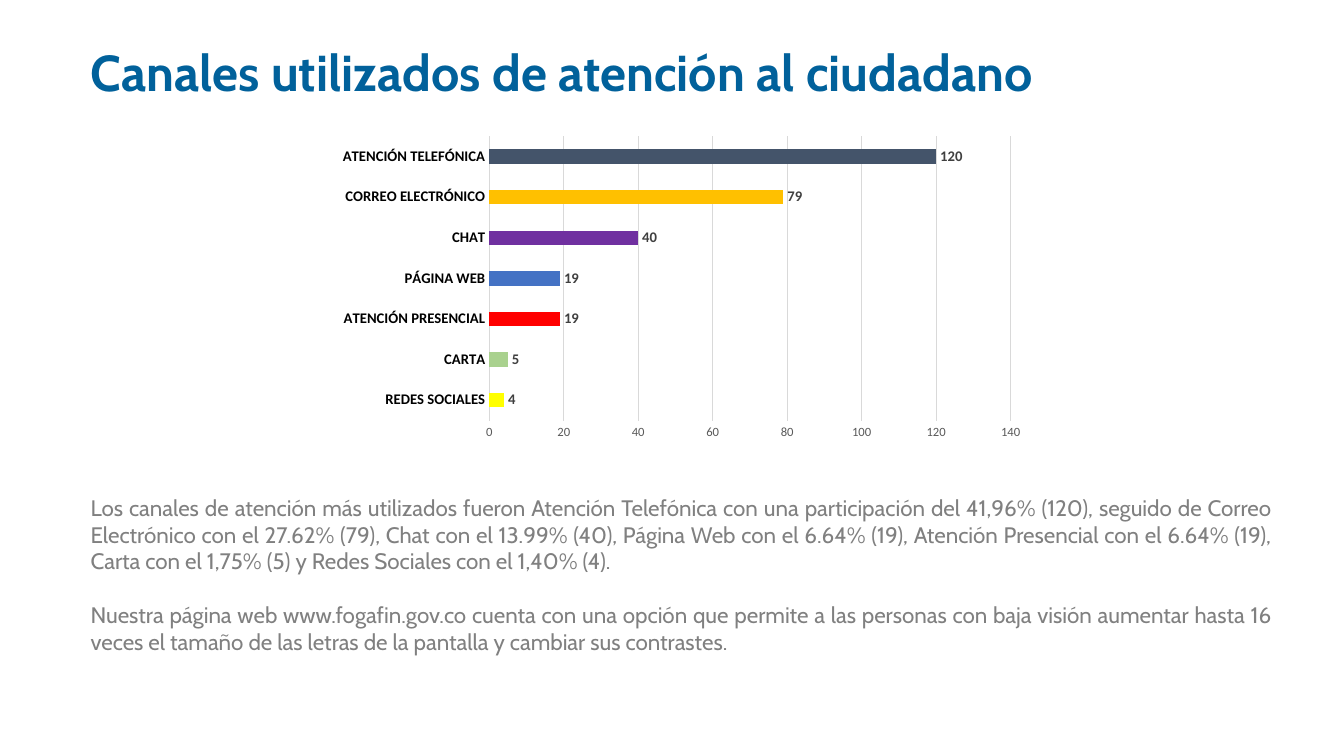
"""Builds the slide on the channels used for citizen service."""
from dataclasses import dataclass

from pptx import Presentation
from pptx.chart.data import CategoryChartData
from pptx.dml.color import RGBColor
from pptx.enum.chart import XL_CHART_TYPE, XL_LABEL_POSITION, XL_TICK_MARK
from pptx.enum.text import MSO_ANCHOR, PP_ALIGN
from pptx.util import Inches, Pt


@dataclass(frozen=True)
class Theme:
    heading_font: str = "Cabin"
    chart_font: str = "Calibri"
    heading: str = "01619B"
    body: str = "808080"
    category: str = "000000"
    value: str = "404040"
    scale: str = "595959"
    grid: str = "D9D9D9"
    bar: str = "5B9BD5"
    heading_size: float = 36
    body_size: float = 16
    label_size: float = 10.5
    scale_size: float = 9
    chart_size: float = 10


theme = Theme()


def style(font, *, face, size, color, bold=False):
    font.name, font.size, font.bold = face, Pt(size), bold
    font.color.rgb = RGBColor.from_string(color)


def write(paragraph, text, *, align=PP_ALIGN.LEFT, spacing=1.0, before=0, **look):
    paragraph.alignment = align
    paragraph.line_spacing = spacing
    paragraph.space_before = Pt(before)
    run = paragraph.add_run()
    run.text = text
    style(run.font, **look)


deck = Presentation()
deck.slide_width, deck.slide_height = Inches(13.33), Inches(7.5)
slide = deck.slides.add_slide(deck.slide_layouts[5])
margin = Inches(0.8)

heading = slide.shapes.title
heading.left, heading.top = margin, Inches(0.2)
heading.width, heading.height = Inches(10.59), Inches(1.09)
heading.text_frame.vertical_anchor = MSO_ANCHOR.MIDDLE
heading.text_frame.word_wrap = True
write(heading.text_frame.paragraphs[0], "Canales utilizados de atención al ciudadano",
      spacing=0.9, face=theme.heading_font, size=theme.heading_size,
      color=theme.heading, bold=True)

findings = [
    "Los canales de atención más utilizados fueron Atención Telefónica con una "
    "participación del 41,96% (120), seguido de Correo Electrónico con el 27.62% (79), "
    "Chat con el 13.99% (40), Página Web con el 6.64% (19), Atención Presencial con el "
    "6.64% (19), Carta con el 1,75% (5) y Redes Sociales con el 1,40% (4).",
    "Nuestra página web www.fogafin.gov.co cuenta con una opción que permite a las "
    "personas con baja visión aumentar hasta 16 veces el tamaño de las letras de la "
    "pantalla y cambiar sus contrastes.",
]
summary = slide.shapes.add_textbox(
    margin, Inches(4.85), Inches(11.92), Inches(1.72)).text_frame
summary.word_wrap = True
for index, finding in enumerate(findings):
    paragraph = summary.add_paragraph() if index else summary.paragraphs[0]
    write(paragraph, finding, align=PP_ALIGN.JUSTIFY, before=19.4 * index,
          face=theme.heading_font, size=theme.body_size, color=theme.body)

channels = [
    ("REDES SOCIALES", 4, "FFFF00"),
    ("CARTA", 5, "A9D18E"),
    ("ATENCIÓN PRESENCIAL", 19, "FF0000"),
    ("PÁGINA WEB", 19, "4472C4"),
    ("CHAT", 40, "7030A0"),
    ("CORREO ELECTRÓNICO", 79, "FFC000"),
    ("ATENCIÓN TELEFÓNICA", 120, "44546A"),
]
requests = CategoryChartData()
requests.categories = [name for name, count, color in channels]
requests.add_series("Series 1", [count for name, count, color in channels])
usage = slide.shapes.add_chart(
    XL_CHART_TYPE.BAR_CLUSTERED, Inches(3.26), Inches(1.29), Inches(7), Inches(3.13),
    requests).chart
usage.has_legend = False
usage.has_title = False
style(usage.font, face=theme.chart_font, size=theme.chart_size, color=theme.category)

channel_axis, count_axis = usage.category_axis, usage.value_axis
for axis in (channel_axis, count_axis):
    axis.major_tick_mark = axis.minor_tick_mark = XL_TICK_MARK.NONE
style(channel_axis.tick_labels.font, face=theme.chart_font, size=theme.label_size,
      color=theme.category, bold=True)
style(count_axis.tick_labels.font, face=theme.chart_font, size=theme.scale_size,
      color=theme.scale)
count_axis.minimum_scale, count_axis.maximum_scale, count_axis.major_unit = 0, 140, 20
count_axis.format.line.fill.background()
count_axis.has_major_gridlines = True
for rule in (channel_axis.format.line, count_axis.major_gridlines.format.line):
    rule.width = Pt(0.75)
    rule.color.rgb = RGBColor.from_string(theme.grid)

bars = usage.plots[0]
bars.gap_width = 182
bars.vary_by_categories = False
series = bars.series[0]
series.format.fill.solid()
series.format.fill.fore_color.rgb = RGBColor.from_string(theme.bar)
for index, (name, count, color) in enumerate(channels):
    fill = series.points[index].format.fill
    fill.solid()
    fill.fore_color.rgb = RGBColor.from_string(color)
counts = series.data_labels
counts.show_value = True
counts.position = XL_LABEL_POSITION.OUTSIDE_END
style(counts.font, face=theme.chart_font, size=theme.label_size, color=theme.value,
      bold=True)

deck.save("out.pptx")
